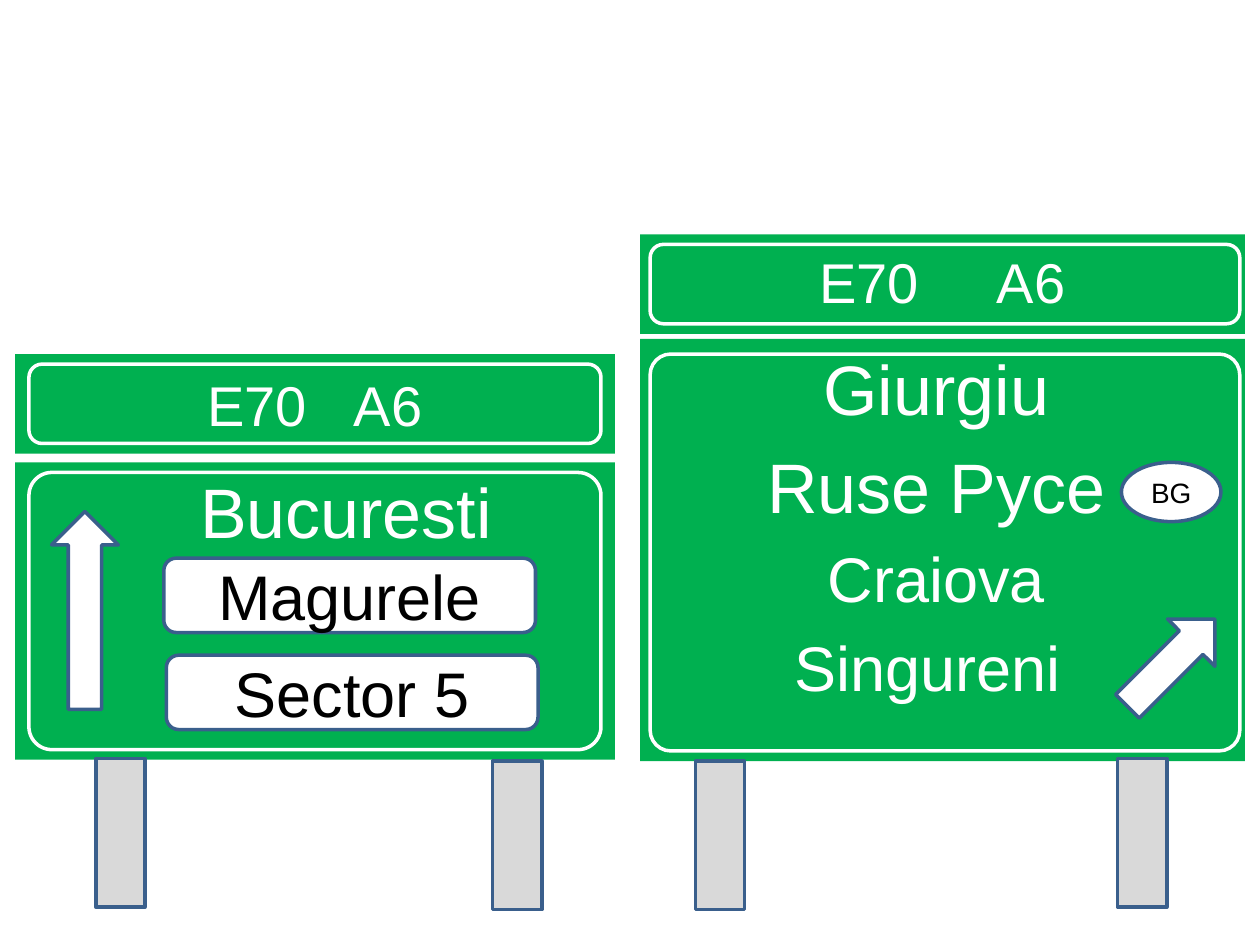
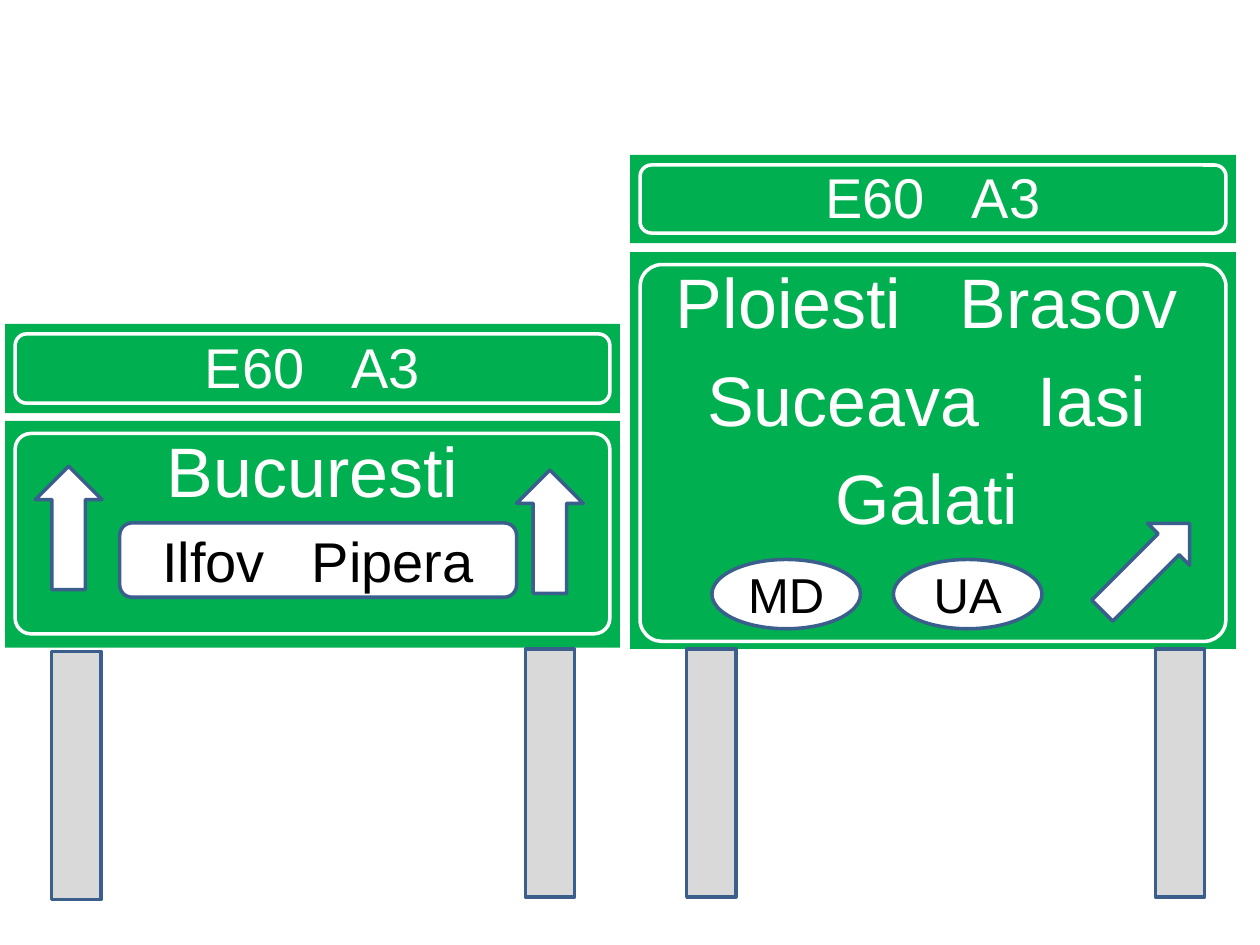
from pptx import Presentation
from pptx.dml.color import RGBColor
from pptx.enum.shapes import MSO_SHAPE as Kind
from pptx.enum.text import MSO_ANCHOR as Anchor, MSO_AUTO_SIZE as Fit, PP_ALIGN as Align
from pptx.oxml.ns import qn
from pptx.util import Inches, Pt

GREEN, WHITE, BLACK, GREY, BLUE = "00B050", "FFFFFF", "000000", "D9D9D9", "3A5F8C"
FONT = "Arial"
RIM = 0.08       # from the edge of a head board to its frame
POST = 0.39      # post width
SPACE = 0.278    # width of a blank, in ems

# Content: two road signs a slide. A bar in a text marks a wide gap.
# x: left and width; head, main: top and height; rim: frame box of the main board
# posts: left, top; arrows: left, top, width, height, turn
# plates, ovals: text, size, box
SIGNS = [
    [
        dict(x=(0.12, 4.76), head=(2.81, 0.79), main=(3.67, 2.36), pad=0.59,
             road="E70|A6", gap=3, inset=(0.2, 0.2), towns=[("Bucuresti", 40)],
             rim=(0.23, 3.75, 4.54, 2.2), bend=0.083,
             posts=[(0.76, 6.02), (3.91, 6.04)], tall=1.18,
             arrows=[(0.41, 4.06, 0.53, 1.57, 0)],
             plates=[("Magurele", 36, (1.3, 4.43, 2.95, 0.59)),
                     ("Sector 5", 36, (1.32, 5.2, 2.95, 0.59))], ovals=[]),
        dict(x=(5.08, 4.8), head=(1.86, 0.79), main=(2.69, 3.35), pad=0,
             road="E70|A6", gap=5, inset=(0.12, 0.16),
             towns=[("Giurgiu", 40), ("Ruse Pyce", 40), ("Craiova", 36), ("Singureni ", 36)],
             rim=(5.16, 2.81, 4.68, 3.15), bend=0.052,
             posts=[(5.52, 6.04), (8.87, 6.02)], tall=1.18,
             arrows=[(9.03, 4.77, 0.53, 0.98, 45)],
             plates=[], ovals=[("BG", 16, (8.9, 3.67, 0.79, 0.47))]),
    ],
    [
        dict(x=(0.04, 4.88), head=(2.57, 0.71), main=(3.34, 1.8), pad=0.1,
             road="E60|A3", gap=3, inset=(0.12, 0.16), towns=[("Bucuresti", 40)],
             rim=(0.12, 3.44, 4.72, 1.59), bend=0.078,
             posts=[(0.41, 5.17), (4.17, 5.15)], tall=1.97,
             arrows=[(0.28, 3.7, 0.53, 0.98, 0), (4.1, 3.73, 0.53, 0.98, 0)],
             plates=[("Ilfov|Pipera", 32, (0.95, 4.15, 3.15, 0.59))], ovals=[]),
        dict(x=(5, 4.81), head=(1.23, 0.7), main=(2, 3.15), pad=0,
             road="E60|A3", gap=3, inset=(0.12, 0.16),
             towns=[("Ploiesti|Brasov", 40), ("Suceava|Iasi", 40), ("Galati", 40)],
             rim=(5.08, 2.1, 4.65, 2.99), bend=0.058,
             posts=[(5.45, 5.15), (9.17, 5.15)], tall=1.97,
             arrows=[(8.86, 4.01, 0.47, 0.98, 45)],
             plates=[], ovals=[("MD", 28, (5.65, 4.44, 1.18, 0.55)),
                               ("UA", 28, (7.09, 4.44, 1.18, 0.55))]),
    ],
]


def rgb(code):
    return RGBColor.from_string(code)


def write(para, text, size, color=WHITE, gap=3):
    """Fill a centred line; a bar becomes one blank widened to `gap` blanks."""
    para.alignment = Align.CENTER
    for part in text.replace("|", "\n \n").split("\n"):
        run = para.add_run()
        run.text = part
        font = run.font
        font.name, font.size, font.bold = FONT, Pt(size), False
        font.color.rgb = rgb(color)
        if part == " ":
            wide = (gap - 1) * SPACE * size
            run._r.get_or_add_rPr().set("spc", str(round(wide * 100)))


def board(hold, box, lines, inset, anchor, gap=3):
    """Turn a placeholder into a green board with lines of text."""
    hold.left, hold.top, hold.width, hold.height = map(Inches, box)
    hold.fill.solid()
    hold.fill.fore_color.rgb = rgb(GREEN)
    frame = hold.text_frame
    frame.auto_size, frame.word_wrap = Fit.NONE, True
    frame.vertical_anchor = anchor
    (frame.margin_left, frame.margin_top,
     frame.margin_right, frame.margin_bottom) = map(Inches, inset)
    for i, (text, size) in enumerate(lines):
        para = frame.add_paragraph() if i else frame.paragraphs[0]
        write(para, text, size, gap=gap)
        props = para._p.get_or_add_pPr()
        props.set("marL", "0")
        props.set("indent", "0")
        props.append(props.makeelement(qn("a:buNone"), {}))


def draw(slide, kind, box, fill=WHITE, line=BLUE, text="", size=0, turn=0, bend=None):
    shape = slide.shapes.add_shape(kind, *map(Inches, box))
    shape.shadow.inherit = False
    shape.rotation = turn
    if fill:
        shape.fill.solid()
        shape.fill.fore_color.rgb = rgb(fill)
    else:
        shape.fill.background()
    shape.line.color.rgb = rgb(line)
    shape.line.width = Pt(2)
    if bend:
        shape.adjustments[0] = bend
    if text:
        shape.text_frame.vertical_anchor = Anchor.MIDDLE
        write(shape.text_frame.paragraphs[0], text, size, BLACK)


def build(slide, sign, head, main):
    left, width = sign["x"]
    top, high = sign["head"]
    over, under = sign["inset"]

    # Boards
    board(head, (left, top, width, high), [(sign["road"], 32)],
          (0.1, over, 0.1, under), Anchor.MIDDLE, sign["gap"])
    board(main, (left, sign["main"][0], width, sign["main"][1]), sign["towns"],
          (sign["pad"], 0.05, 0.1, 0.05), Anchor.TOP)

    # Posts, arrows and labels
    for x, y in sign["posts"]:
        draw(slide, Kind.RECTANGLE, (x, y, POST, sign["tall"]), GREY)
    for *box, turn in sign["arrows"]:
        draw(slide, Kind.UP_ARROW, box, turn=turn)
    for kind, key in ((Kind.ROUNDED_RECTANGLE, "plates"), (Kind.OVAL, "ovals")):
        for text, size, box in sign[key]:
            draw(slide, kind, box, text=text, size=size)

    # White frames
    rim = sign["rim"]
    edge = (rim[0], top + RIM, rim[2], high - 2 * RIM)
    for box, bend in ((edge, None), (rim, sign["bend"])):
        draw(slide, Kind.ROUNDED_RECTANGLE, box, None, WHITE, bend=bend)


def main():
    deck = Presentation()
    deck.slide_width, deck.slide_height = Inches(10), Inches(7.5)
    for pair in SIGNS:
        slide = deck.slides.add_slide(deck.slide_layouts[4])
        title, *holds = slide.placeholders
        title.element.getparent().remove(title.element)
        for i, sign in enumerate(pair):
            build(slide, sign, *holds[2 * i:2 * i + 2])
    deck.save("out.pptx")


if __name__ == "__main__":
    main()
